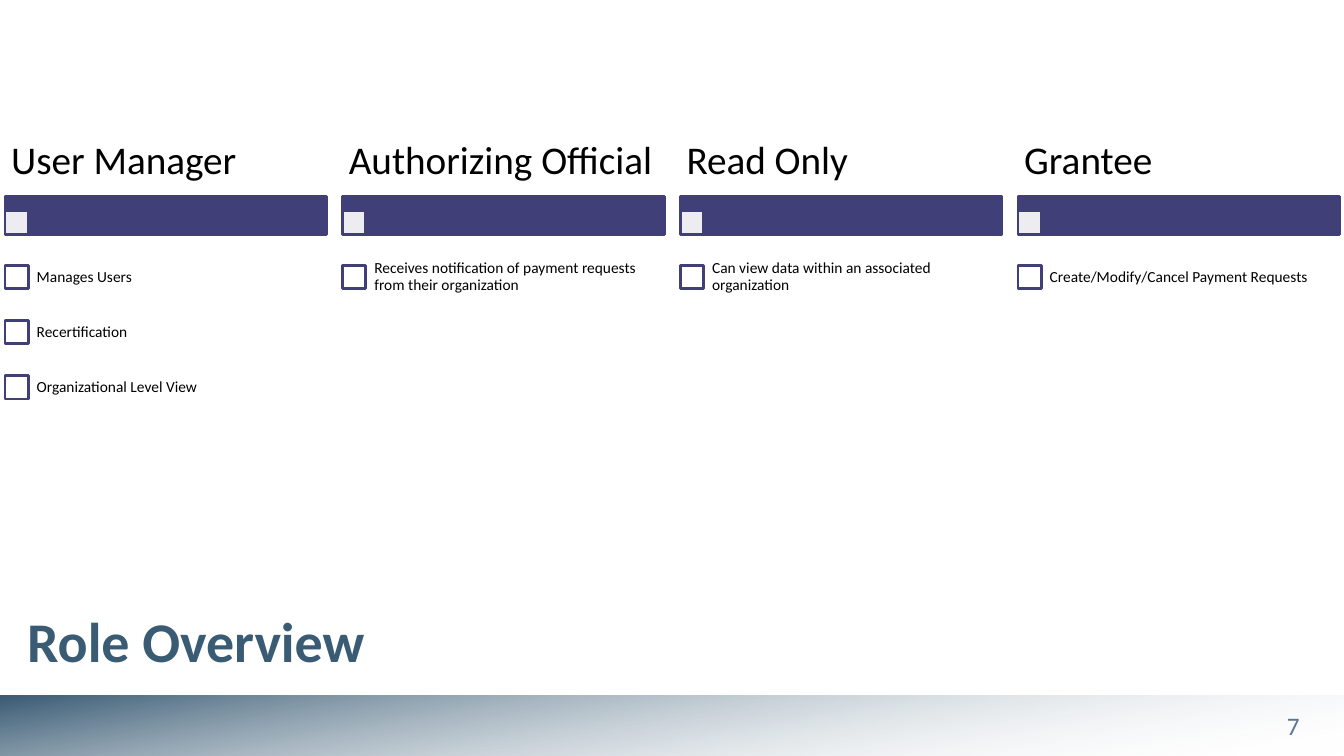
from lxml.etree import SubElement
from pptx import Presentation
from pptx.dml.color import RGBColor
from pptx.enum.shapes import MSO_SHAPE
from pptx.enum.text import MSO_ANCHOR, PP_ALIGN
from pptx.oxml.ns import qn
from pptx.util import Pt

COLORS = {"bar": "413F77", "white": "FFFFFF", "text": "000000",
          "title": "395B74", "number": "577795"}
ROLES = [
    ("User Manager", ["Manages Users", "Recertification", "Organizational Level View"]),
    ("Authorizing Official",
     ["Receives notification of payment requests from their organization"]),
    ("Read Only", ["Can view data within an associated organization"]),
    ("Grantee", ["Create/Modify/Cancel Payment Requests"]),
]
LEFT, COL_PITCH, COL_W = 3.6, 241.2, 229.8
ROW_TOP, ROW_PITCH, BOX = 178.2, 39.4, 16.6


class Deck:
    font = "Calibri"

    def __init__(self, prs):
        self.slide = prs.slides.add_slide(prs.slide_layouts[6])

    def color(self, name):
        return RGBColor.from_string(COLORS[name])

    def set_alpha(self, parent, percent):
        clr = next(parent.iter(qn("a:srgbClr")))
        SubElement(clr, qn("a:alpha"), val=str(percent * 1000))

    def rect(self, x, y, w, h, fill, line="bar", alpha=None):
        sp = self.slide.shapes.add_shape(
            MSO_SHAPE.RECTANGLE, Pt(x), Pt(y), Pt(w), Pt(h))
        sp.shadow.inherit = False
        sp.fill.solid()
        sp.fill.fore_color.rgb = self.color(fill)
        if alpha is not None:
            self.set_alpha(sp.fill._xPr, alpha)
        sp.line.color.rgb = self.color(line)
        sp.line.width = Pt(2)
        return sp

    def gradient_band(self, x, y, w, h, start, end):
        sp = self.rect(x, y, w, h, start)
        sp.line.fill.background()
        sp.fill.gradient()
        sp.fill.gradient_angle = 280
        first, last = sp.fill.gradient_stops
        first.color.rgb, first.position = self.color(start), 0
        last.color.rgb, last.position = self.color(end), 0.99
        self.set_alpha(last._gs, 0)

    def text(self, x, y, w, h, text, size, color="text", inset=(7.2, 3.6),
             bold=False, align=PP_ALIGN.LEFT, anchor=MSO_ANCHOR.MIDDLE, spacing=0.9):
        tf = self.slide.shapes.add_textbox(Pt(x), Pt(y), Pt(w), Pt(h)).text_frame
        tf.word_wrap = True
        tf.vertical_anchor = anchor
        tf.margin_left = tf.margin_right = Pt(inset[0])
        tf.margin_top = tf.margin_bottom = Pt(inset[1])
        p = tf.paragraphs[0]
        p.text = text
        p.alignment = align
        p.line_spacing = spacing
        p.font.name = self.font
        p.font.size = Pt(size)
        p.font.bold = bold
        p.font.color.rgb = self.color(color)

    def role(self, x, name, duties):
        self.rect(x, 140.4, COL_W, 27.2, "bar")
        self.rect(x, 150.6, BOX, BOX, "white", alpha=90)
        self.text(x, 91.6, COL_W, 48.4, name, 28, inset=(4.4, 3))
        for i, duty in enumerate(duties):
            y = ROW_TOP + i * ROW_PITCH
            self.rect(x, y + (ROW_PITCH - BOX) / 2, BOX, BOX, "white")
            self.text(x + 16.2, y, 213.6, ROW_PITCH, duty, 11, inset=(6.4, 6.4))


def main():
    prs = Presentation()
    prs.slide_width, prs.slide_height = Pt(960), Pt(540)
    deck = Deck(prs)
    deck.gradient_band(0, 496.6, 960, 43.4, "title", "white")
    deck.text(887.6, 504.8, 72.4, 27.4, "7", 18, "number", inset=(5, 2.6),
              align=PP_ALIGN.CENTER, anchor=MSO_ANCHOR.TOP, spacing=1.0)
    deck.text(12.4, 421.4, 756, 72, "Role Overview", 40, "title", bold=True, spacing=1.0)
    for i, (name, duties) in enumerate(ROLES):
        deck.role(LEFT + i * COL_PITCH, name, duties)
    prs.save("out.pptx")


if __name__ == "__main__":
    main()
